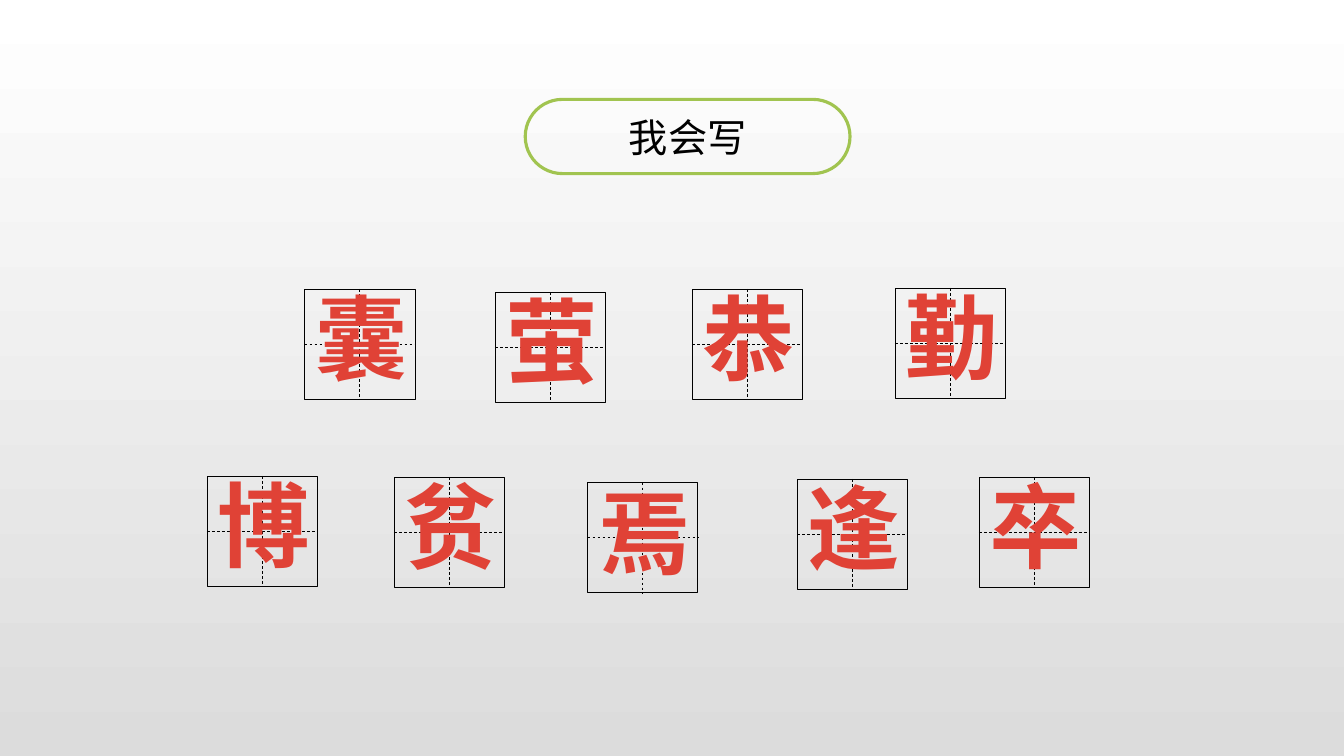
import pptx
import pptx.util
import pptx.dml.color
import pptx.enum.dml
import pptx.enum.shapes
import pptx.enum.text
import pptx.oxml.ns
from lxml import etree

Pt = pptx.util.Pt
qn = pptx.oxml.ns.qn
FONT = "Noto Sans CJK SC"
CELL = 78.7


def rgb(value):
    return pptx.dml.color.RGBColor.from_string(value)


def write(tf, text, color, formats):
    p = tf.paragraphs[0]
    r = p.add_run()
    r.text = text
    for name, value in formats.items():
        setattr(r.font, name, value)
    r.font.color.rgb = rgb(color)
    r.font.name = FONT
    etree.SubElement(r.font._element, qn("a:ea")).set("typeface", FONT)
    return p


prs = pptx.Presentation()
prs.slide_width, prs.slide_height = Pt(960), Pt(540)
s = prs.slides.add_slide(prs.slide_layouts[5])

# Background gradient, white at the top
fill = s.background.fill
fill.gradient()
fill.gradient_angle = 270
for stop, color, position in zip(fill.gradient_stops, ("FFFFFF", "DCDCDC"), (0, 1)):
    stop.color.rgb = rgb(color)
    stop.position = position

# Title
title = s.shapes.title
box = {"left": Pt(375.2), "top": Pt(71), "width": Pt(232), "height": Pt(53)}
for name, value in box.items():
    setattr(title, name, value)
tf = title.text_frame
tf.auto_size = pptx.enum.text.MSO_AUTO_SIZE.NONE
tf.vertical_anchor = pptx.enum.text.MSO_ANCHOR.MIDDLE
p = write(tf, "我会写", "000000", {"size": Pt(28), "bold": False})
p.alignment = pptx.enum.text.PP_ALIGN.CENTER

# Green pill around the title
pill = s.shapes.add_shape(pptx.enum.shapes.MSO_SHAPE.ROUNDED_RECTANGLE, **box)
pill.adjustments[0] = 0.5
pill.shadow.inherit = False
pill.fill.background()
pill.line.color.rgb = rgb("A1C450")
pill.line.width = Pt(2.25)

# Writing squares: character, left, top
characters = [
    ("囊", 217.6, 206.3), ("萤", 353.6, 208.6), ("恭", 494.4, 206.3), ("勤", 639.2, 205.6),
    ("贫", 281.4, 340.6), ("焉", 419.7, 344.7), ("逢", 569.4, 342), ("卒", 699.3, 340.6),
    ("博", 147.8, 340),
]
for character, x, y in characters:
    group = s.shapes.add_group_shape()

    # Frame
    sp = group.shapes.add_shape(pptx.enum.shapes.MSO_SHAPE.RECTANGLE,
                                Pt(x), Pt(y), Pt(CELL), Pt(CELL))
    sp.shadow.inherit = False
    sp.fill.background()
    sp.line.color.rgb = rgb("000000")
    sp.line.width = Pt(0.25)

    # Dashed guides
    mid_x, mid_y = x + CELL / 2, y + CELL / 2
    for ends in ((mid_x, y, mid_x, y + CELL), (x, mid_y, x + CELL, mid_y)):
        guide = group.shapes.add_connector(pptx.enum.shapes.MSO_CONNECTOR.STRAIGHT,
                                           *[Pt(v) for v in ends])
        guide.line.color.rgb = rgb("000000")
        guide.line.width = Pt(0.5)
        guide.line.dash_style = pptx.enum.dml.MSO_LINE.DASH
        etree.SubElement(guide._element.spPr, qn("a:effectLst"))

    # Character
    tb = group.shapes.add_textbox(Pt(x + 2.5), Pt(y - 8.5), Pt(CELL), Pt(101))
    tf = tb.text_frame
    insets = {"margin_left": 5, "margin_right": 5, "margin_top": 3, "margin_bottom": 3}
    for name, value in insets.items():
        setattr(tf, name, Pt(value))
    tf.word_wrap = True
    write(tf, character, "E04236", {"size": Pt(66), "bold": True})

prs.save("out.pptx")
